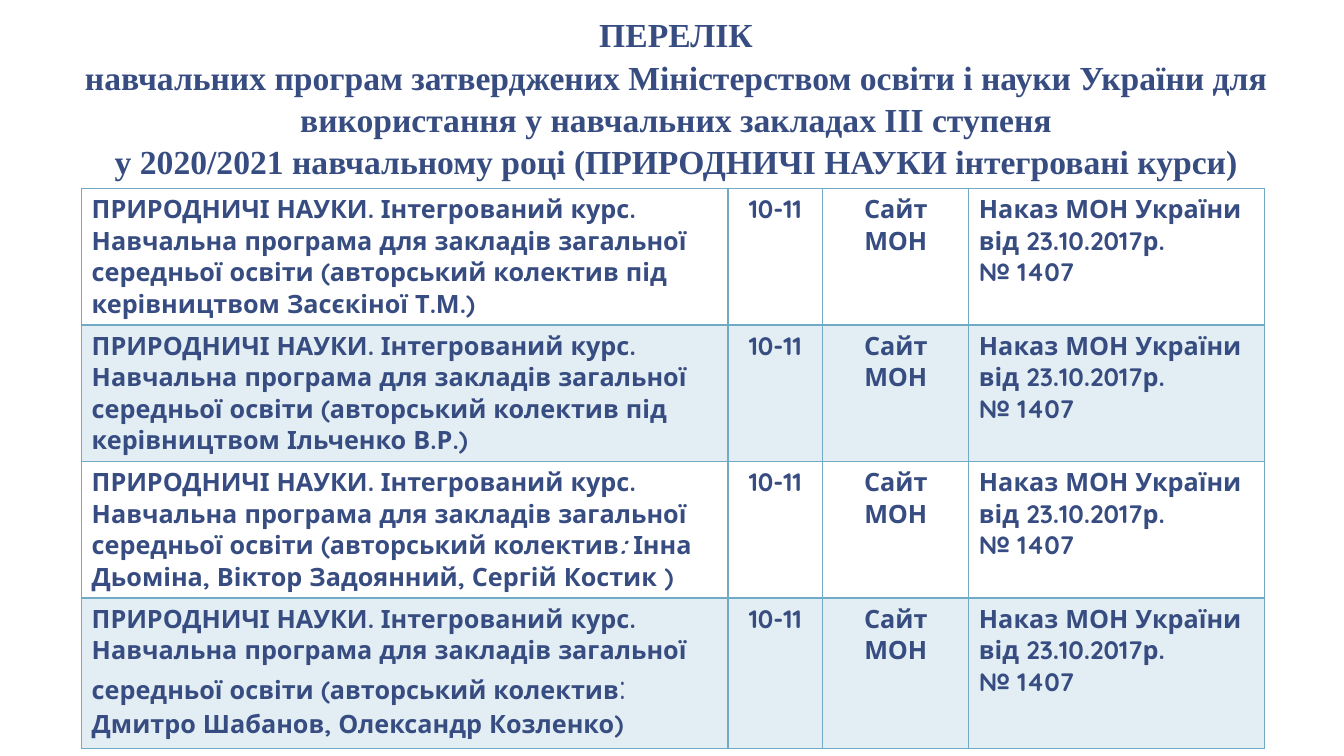
from dataclasses import dataclass

from lxml.etree import SubElement
from pptx import Presentation
from pptx.dml.color import RGBColor
from pptx.enum.text import MSO_ANCHOR, PP_ALIGN as Align
from pptx.oxml.ns import qn
from pptx.util import Inches, Pt


@dataclass(frozen=True)
class Theme:
    ink: str = "374C81"
    accent: str = "70AAC4"
    band_opacity: int = 20
    title_font: str = "Times New Roman"
    table_font: str = "Quicksand"
    title_size: int = 24
    table_size: int = 18
    large_size: int = 24
    thin_line: int = 1
    thick_line: int = 2


THEME = Theme()
TITLE_FORMAT = {"name": THEME.title_font, "size": Pt(THEME.title_size), "bold": True}
TABLE_FORMAT = {"name": THEME.table_font, "size": Pt(THEME.table_size), "bold": True}

TITLE_LINES = [
    "ПЕРЕЛІК",
    "навчальних програм затверджених Міністерством освіти і науки України для "
    "використання у навчальних закладах ІІІ ступеня",
    "у 2020/2021 навчальному році (ПРИРОДНИЧІ НАУКИ інтегровані курси)",
]
COURSE = ("ПРИРОДНИЧІ НАУКИ. Інтегрований курс. Навчальна програма для закладів "
          "загальної середньої освіти (авторський колектив")
# Each programme is a list of runs: text and the format that differs from the table text.
PROGRAMMES = [
    [(COURSE + " під керівництвом Засєкіної Т.М.)", {})],
    [(COURSE + " під керівництвом Ільченко В.Р.)", {})],
    [(COURSE, {}), (": ", {"italic": True}),
     ("Інна Дьоміна, Віктор Задоянний, Сергій Костик )", {})],
    [(COURSE, {}), (": ", {"size": Pt(THEME.large_size), "bold": False}),
     ("Дмитро Шабанов, Олександр Козленко)", {})],
]
GRADES = "10-11"
SOURCE = "Сайт МОН"
ORDER = ["Наказ МОН України", "від 23.10.2017р.", "№ 1407"]

COLUMN_WIDTHS = [6.41, 0.94, 1.45, 2.93]
ROW_HEIGHTS = [1.27, 1.27, 1.27, 1.49]


def add_span(para, text, values):
    span = para.add_run()
    span.text = text
    for key, value in values.items():
        setattr(span.font, key, value)
    span.font.color.rgb = RGBColor.from_string(THEME.ink)


def add_title(page):
    title = page.shapes.title
    place = {"left": 0.65, "top": 0.08, "width": 12.11, "height": 1.79}
    for key, value in place.items():
        setattr(title, key, Inches(value))
    frame = title.text_frame
    margins = {"margin_left": 0.13, "margin_right": 0.13,
               "margin_top": 0.07, "margin_bottom": 0.07}
    for key, value in margins.items():
        setattr(frame, key, Inches(value))
    frame.word_wrap = True
    frame.vertical_anchor = MSO_ANCHOR.BOTTOM
    para = frame.paragraphs[0]
    para.alignment = Align.CENTER
    para.line_spacing = 1.05
    for index, line in enumerate(TITLE_LINES):
        if index:
            para.add_line_break()
        add_span(para, line, TITLE_FORMAT)


def write_cell(cell, paragraphs, alignment):
    """Write paragraphs, each a list of (text, format changes) runs."""
    frame = cell.text_frame
    for index, runs in enumerate(paragraphs):
        para = frame.add_paragraph() if index else frame.paragraphs[0]
        para.alignment = alignment
        for text, changes in runs:
            add_span(para, text, {**TABLE_FORMAT, **changes})


def draw_borders(cell, top, bottom):
    widths = {"a:lnL": THEME.thin_line, "a:lnR": THEME.thin_line,
              "a:lnT": top, "a:lnB": bottom}
    properties = cell._tc.get_or_add_tcPr()
    for tag, width in widths.items():
        line = SubElement(properties, qn(tag), w=str(int(Pt(width))))
        fill = SubElement(line, qn("a:solidFill"))
        SubElement(fill, qn("a:srgbClr"), val=THEME.accent)


def fill_cell(cell, banded):
    if not banded:
        cell.fill.background()
        return
    cell.fill.solid()
    cell.fill.fore_color.rgb = RGBColor.from_string(THEME.accent)
    color = cell._tc.tcPr.find(qn("a:solidFill")).find(qn("a:srgbClr"))
    SubElement(color, qn("a:alpha"), val=str(THEME.band_opacity * 1000))


def add_programme_table(page):
    frame = page.shapes.add_table(
        len(PROGRAMMES), len(COLUMN_WIDTHS), Inches(0.81), Inches(1.87),
        Inches(sum(COLUMN_WIDTHS)), Inches(sum(ROW_HEIGHTS)))
    table = frame.table
    table.first_row = table.horz_banding = False
    for column, width in zip(table.columns, COLUMN_WIDTHS):
        column.width = Inches(width)
    for index, (row, height) in enumerate(zip(table.rows, ROW_HEIGHTS)):
        row.height = Inches(height)
        contents = [
            ([PROGRAMMES[index]], Align.LEFT),
            ([[(GRADES, {})]], Align.CENTER),
            ([[(SOURCE, {})]], Align.CENTER),
            ([[(line, {})] for line in ORDER], Align.LEFT),
        ]
        top = THEME.thick_line if index == 1 else THEME.thin_line
        bottom = THEME.thick_line if index == 0 else THEME.thin_line
        for cell, (paragraphs, alignment) in zip(row.cells, contents):
            write_cell(cell, paragraphs, alignment)
            draw_borders(cell, top, bottom)
            fill_cell(cell, banded=index % 2 == 1)


def main():
    deck = Presentation()
    deck.slide_width, deck.slide_height = Inches(13.33), Inches(7.5)
    page = deck.slides.add_slide(deck.slide_layouts.get_by_name("Title Only"))
    add_title(page)
    add_programme_table(page)
    deck.save("out.pptx")


if __name__ == "__main__":
    main()
